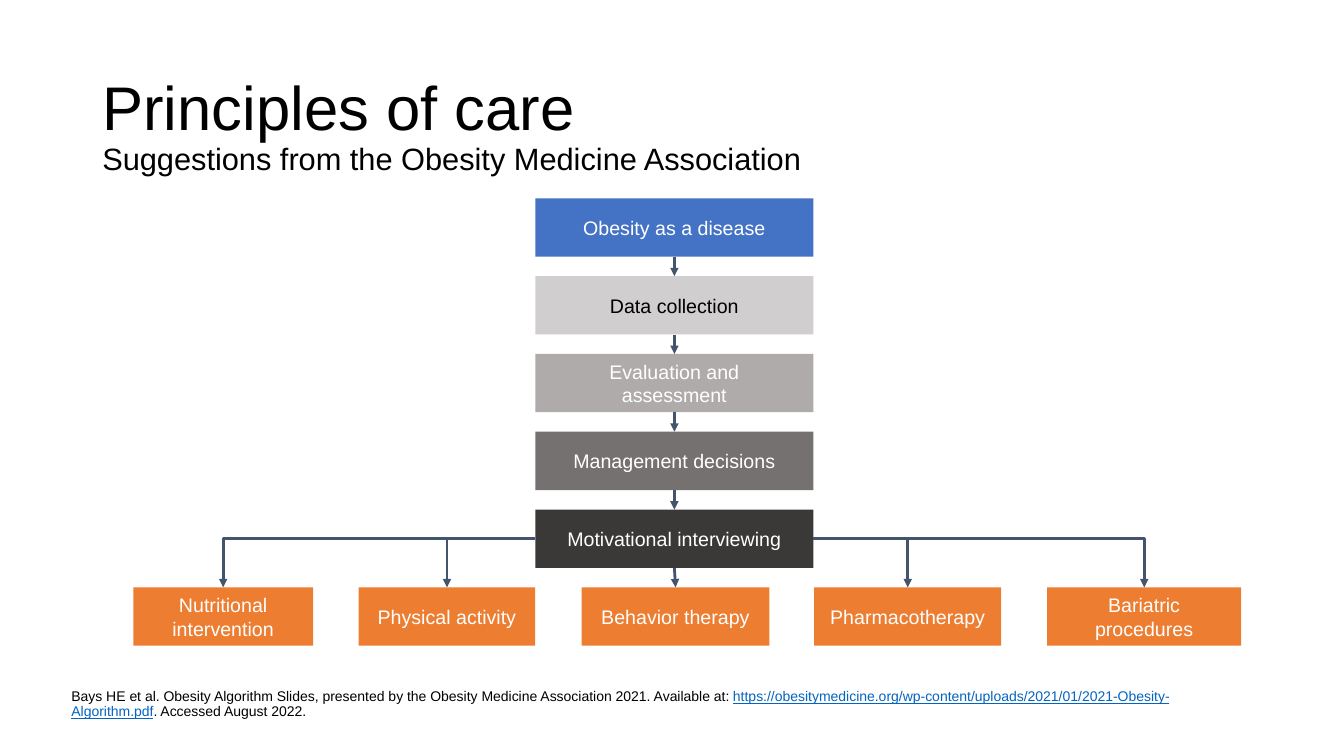
from lxml import etree
from pptx import Presentation
from pptx.dml.color import RGBColor
from pptx.enum.shapes import MSO_CONNECTOR, MSO_SHAPE
from pptx.enum.text import MSO_ANCHOR, PP_ALIGN
from pptx.oxml.ns import qn
from pptx.util import Cm, Pt

RECTANGLE = MSO_SHAPE.RECTANGLE
STRAIGHT, ELBOW = MSO_CONNECTOR.STRAIGHT, MSO_CONNECTOR.ELBOW
MIDDLE, BOTTOM = MSO_ANCHOR.MIDDLE, MSO_ANCHOR.BOTTOM
CENTER = PP_ALIGN.CENTER
TOP_SIDE, LEFT_SIDE, BOTTOM_SIDE, RIGHT_SIDE = range(4)

FONT = "Arial"
COLORS = {
    "black": "000000",
    "white": "FFFFFF",
    "link": "0563C1",
    "arrow": "44546A",
    "branch": "ED7D31",
    "disease": "4472C4",
    "data": "D0CECE",
    "evaluation": "AFABAB",
    "decisions": "767171",
    "interviewing": "3B3838",
}

# Text, fill and text colour of each step, from top to bottom
STEPS = [
    ("Obesity as a disease", "disease", "white"),
    ("Data collection", "data", "black"),
    ("Evaluation and\nassessment", "evaluation", "white"),
    ("Management decisions", "decisions", "white"),
    ("Motivational interviewing", "interviewing", "white"),
]
STEP_OFFSET, STEP_WIDTH, BOX_HEIGHT, PITCH = 10.13, 7.01, 1.47, 1.96

# Text, offset from the left, width, and the side of the last step it leaves
BRANCHES = [
    ("Nutritional intervention", 0, 4.53, LEFT_SIDE),
    ("Physical activity", 5.68, 4.45, LEFT_SIDE),
    ("Behavior therapy", 11.3, 4.73, BOTTOM_SIDE),
    ("Pharmacotherapy", 17.16, 4.71, RIGHT_SIDE),
    ("Bariatric procedures", 23.03, 4.89, RIGHT_SIDE),
]


def color(name):
    return RGBColor.from_string(COLORS[name])


def add_text_area(slide, left, top, width, height, anchor):
    area = slide.shapes.add_textbox(Cm(left), Cm(top), Cm(width), Cm(height))
    frame = area.text_frame
    frame.word_wrap = True
    frame.vertical_anchor = anchor
    paragraph = frame.paragraphs[0]
    paragraph.line_spacing = 0.9
    paragraph.font.name = FONT
    return frame, paragraph


def add_heading(slide, left, top, width, height):
    _, heading = add_text_area(slide, left, top, width, height, MIDDLE)
    title = heading.add_run()
    title.text = "Principles of care"
    title.font.size = Pt(44)
    heading.add_line_break()
    subtitle = heading.add_run()
    subtitle.text = "Suggestions from the Obesity Medicine Association"
    subtitle.font.size = Pt(22)
    heading.font.color.rgb = color("black")


def add_reference(slide, left, top, width, height):
    frame, reference = add_text_area(slide, left, top, width, height, BOTTOM)
    frame.margin_left = frame.margin_right = 0
    frame.margin_top = frame.margin_bottom = 0
    reference.font.size = Pt(10)
    for text, tone in [
        ("Bays HE et al. Obesity Algorithm Slides, presented by the Obesity "
         "Medicine Association 2021. Available at: ", "black"),
        ("https://obesitymedicine.org/wp-content/uploads/2021/01/"
         "2021-Obesity-Algorithm.pdf", "link"),
        (". Accessed August 2022.", "black"),
    ]:
        part = reference.add_run()
        part.text = text
        part.font.color.rgb = color(tone)
        part.font.underline = tone == "link"


def add_box(slide, text, left, top, width, fill, tone):
    box = slide.shapes.add_shape(
        RECTANGLE, Cm(left), Cm(top), Cm(width), Cm(BOX_HEIGHT))
    box.shadow.inherit = False
    box.fill.solid()
    box.fill.fore_color.rgb = color(fill)
    box.line.fill.background()
    frame = box.text_frame
    frame.word_wrap = True
    frame.vertical_anchor = MIDDLE
    frame.text = text
    for paragraph in frame.paragraphs:
        paragraph.alignment = CENTER
        paragraph.font.name = FONT
        paragraph.font.size = Pt(14)
        paragraph.font.color.rgb = color(tone)
    return box


def add_arrow(slide, source, side, target):
    """Join a side of the source to the top of the target."""
    straight = side == BOTTOM_SIDE
    arrow = slide.shapes.add_connector(
        STRAIGHT if straight else ELBOW, 0, 0, 0, 0)
    arrow.begin_connect(source, side)
    arrow.end_connect(target, TOP_SIDE)
    arrow.line.color.rgb = color("arrow")
    arrow.line.width = Pt(2)
    properties = arrow.element.spPr
    if not straight:
        properties.find(qn("a:prstGeom")).set("prst", "bentConnector2")
    etree.SubElement(properties.find(qn("a:ln")), qn("a:tailEnd"), type="triangle")
    etree.SubElement(properties, qn("a:effectLst"))


def add_care_flow(slide, left, top):
    # Column of steps
    steps = [
        add_box(slide, text, left + STEP_OFFSET, top + row * PITCH,
                STEP_WIDTH, fill, tone)
        for row, (text, fill, tone) in enumerate(STEPS)
    ]
    for upper, lower in zip(steps, steps[1:]):
        add_arrow(slide, upper, BOTTOM_SIDE, lower)

    # Row of branches under the last step
    branch_top = top + len(STEPS) * PITCH
    for text, offset, width, side in BRANCHES:
        branch = add_box(slide, text, left + offset, branch_top, width,
                         "branch", "white")
        add_arrow(slide, steps[-1], side, branch)


def main():
    presentation = Presentation()
    presentation.slide_width = Cm(33.87)
    presentation.slide_height = Cm(19.05)
    slide = presentation.slides.add_slide(presentation.slide_layouts[6])
    add_heading(slide, 2.33, 1.37, 29.21, 3.68)
    add_care_flow(slide, 3.36, 5)
    add_reference(slide, 1.8, 17.25, 29.74, 0.89)
    presentation.save("out.pptx")


if __name__ == "__main__":
    main()
